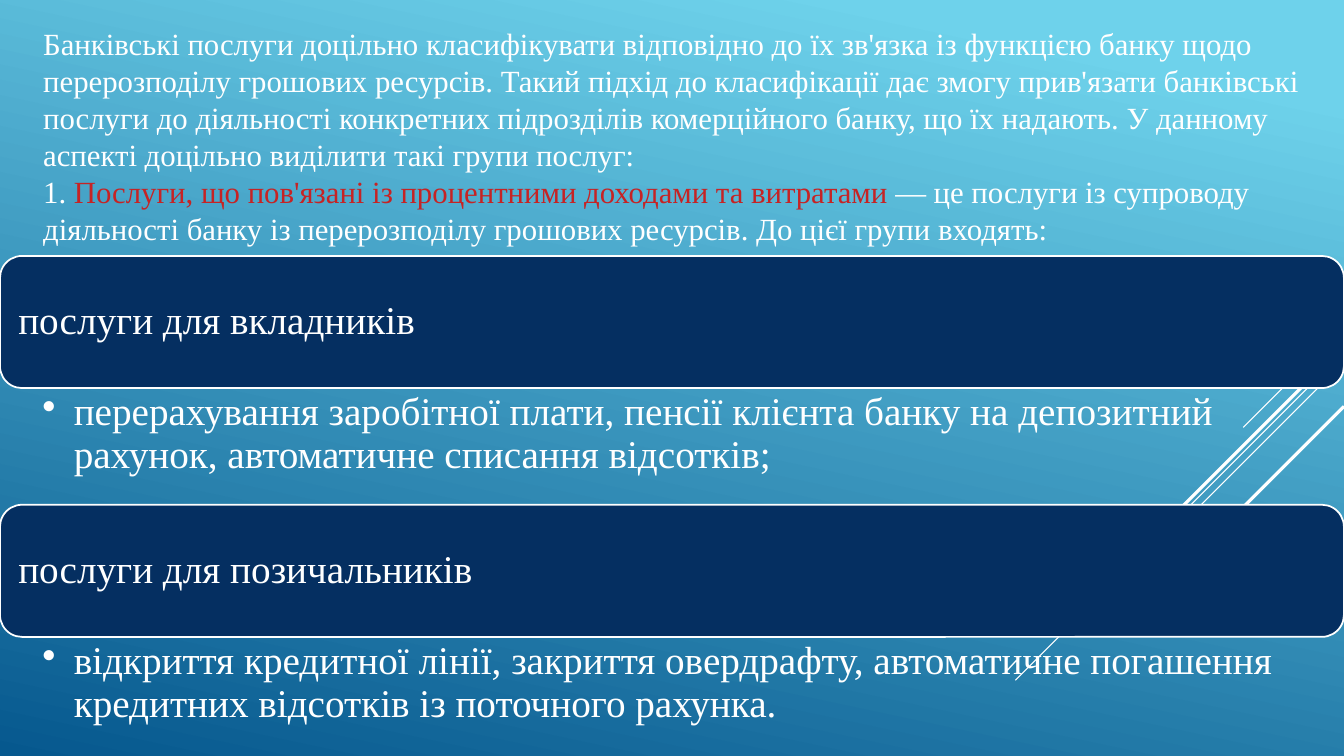
import pptx
import pptx.dml.color
import pptx.enum.shapes
import pptx.enum.text
import pptx.oxml
import pptx.util
from pptx.util import Cm

COLORS = {"white": "FFFFFF", "red": "C62324", "navy": "052F61",
          "sky": "6ED2EB", "deep": "06588E"}
WIDTH, HEIGHT = 33.87, 19.05
CARD, NOTE = 3.33, 2.95
FIRST, PITCH = 6.45, 6.27

# Diagonals from the right edge: start height, run, line width
RAYS = [(8.23, 2.54, 0.75), (8.86, 8.28, 0.75), (9.12, 5.26, 0.75),
        (8.69, 4.85, 2.25), (10.24, 3.53, 2.25)]

INTRO = [
    [("Банківські послуги доцільно класифікувати відповідно до їх зв'язка із "
      "функцією банку щодо перерозподілу грошових ресурсів. Такий підхід до "
      "класифікації дає змогу прив'язати банківські послуги до діяльності "
      "конкретних підрозділів комерційного банку, що їх надають. У данному "
      "аспекті доцільно виділити такі групи послуг:", "white")],
    [("1. ", "white"),
     ("Послуги, що пов'язані із процентними доходами та витратами ", "red"),
     ("— це послуги із супроводу діяльності банку із перерозподілу грошових "
      "ресурсів. До цієї групи входять:", "white")],
]
GROUPS = [
    ("послуги для вкладників",
     "перерахування заробітної плати, пенсії клієнта банку на депозитний "
     "рахунок, автоматичне списання відсотків;"),
    ("послуги для позичальників",
     "відкриття кредитної лінії, закриття овердрафту, автоматичне погашення "
     "кредитних відсотків із поточного рахунка."),
]


def color(name):
    return pptx.dml.color.RGBColor.from_string(COLORS[name])


def add_xml(parent, tag, attrs=""):
    space = "http://schemas.openxmlformats.org/drawingml/2006/main"
    parent.append(pptx.oxml.parse_xml(f'<a:{tag} xmlns:a="{space}" {attrs}/>'))


def write(par, text, size=28, tint="white", spacing=None, bullet=False):
    """Add a run to the paragraph and format both."""
    if bullet:
        props = par._p.get_or_add_pPr()
        props.set("marL", str(Cm(0.79)))
        props.set("indent", str(-Cm(0.79)))
        add_xml(props, "buChar", 'char="•"')
    par.alignment = pptx.enum.text.PP_ALIGN.LEFT
    if spacing:
        par.line_spacing = spacing
    run = par.add_run()
    run.text = text
    run.font.size = pptx.util.Pt(size)
    run.font.name = "Times New Roman"
    run.font.color.rgb = color(tint)


def inset(frame, left, top, right, bottom):
    frame.word_wrap = True
    frame.margin_left, frame.margin_top = Cm(left), Cm(top)
    frame.margin_right, frame.margin_bottom = Cm(right), Cm(bottom)


def paint(slide):
    """Fill the background with the blue gradient."""
    fill = slide.background.fill
    fill.gradient()
    fill.gradient_angle = 258
    stops = zip(fill.gradient_stops, ("sky", "deep"), (0.1, 1))
    for stop, name, place in stops:
        stop.color.rgb = color(name)
        stop.position = place


def add_ray(slide, top, run, width):
    kind = pptx.enum.shapes.MSO_CONNECTOR.STRAIGHT
    ray = slide.shapes.add_connector(
        kind, Cm(WIDTH), Cm(top), Cm(WIDTH - run), Cm(top + run))
    ray.line.color.rgb = color("white")
    ray.line.width = pptx.util.Pt(width)
    add_xml(ray._element.spPr, "effectLst")


def add_intro(slide):
    box = slide.shapes.add_textbox(Cm(0.84), Cm(0.51), Cm(32.59), Cm(5.89))
    frame = box.text_frame
    frame.word_wrap = True
    frame.auto_size = pptx.enum.text.MSO_AUTO_SIZE.SHAPE_TO_FIT_TEXT
    for index, parts in enumerate(INTRO):
        par = frame.add_paragraph() if index else frame.paragraphs[0]
        for text, tint in parts:
            write(par, text, size=22, tint=tint)


def add_card(slide, top, text):
    kind = pptx.enum.shapes.MSO_SHAPE.ROUNDED_RECTANGLE
    card = slide.shapes.add_shape(kind, 0, Cm(top), Cm(WIDTH), Cm(CARD))
    card.shadow.inherit = False
    card.fill.solid()
    card.fill.fore_color.rgb = color("navy")
    card.line.color.rgb = color("white")
    card.line.width = pptx.util.Pt(1.25)
    frame = card.text_frame
    inset(frame, 0.3, 0.3, 0.3, 0.3)
    frame.vertical_anchor = pptx.enum.text.MSO_ANCHOR.MIDDLE
    write(frame.paragraphs[0], text, spacing=0.9)


def add_note(slide, top, text):
    box = slide.shapes.add_textbox(0, Cm(top), Cm(WIDTH), Cm(NOTE))
    inset(box.text_frame, 1.07, 0.1, 0.56, 0.1)
    write(box.text_frame.paragraphs[0], text, spacing=0.9, bullet=True)


def main():
    deck = pptx.Presentation()
    deck.slide_width, deck.slide_height = Cm(WIDTH), Cm(HEIGHT)
    slide = deck.slides.add_slide(deck.slide_layouts[6])
    paint(slide)
    for ray in RAYS:
        add_ray(slide, *ray)
    add_intro(slide)
    for index, (title, detail) in enumerate(GROUPS):
        top = FIRST + index * PITCH
        add_card(slide, top, title)
        add_note(slide, top + CARD, detail)
    deck.save("out.pptx")


if __name__ == "__main__":
    main()
